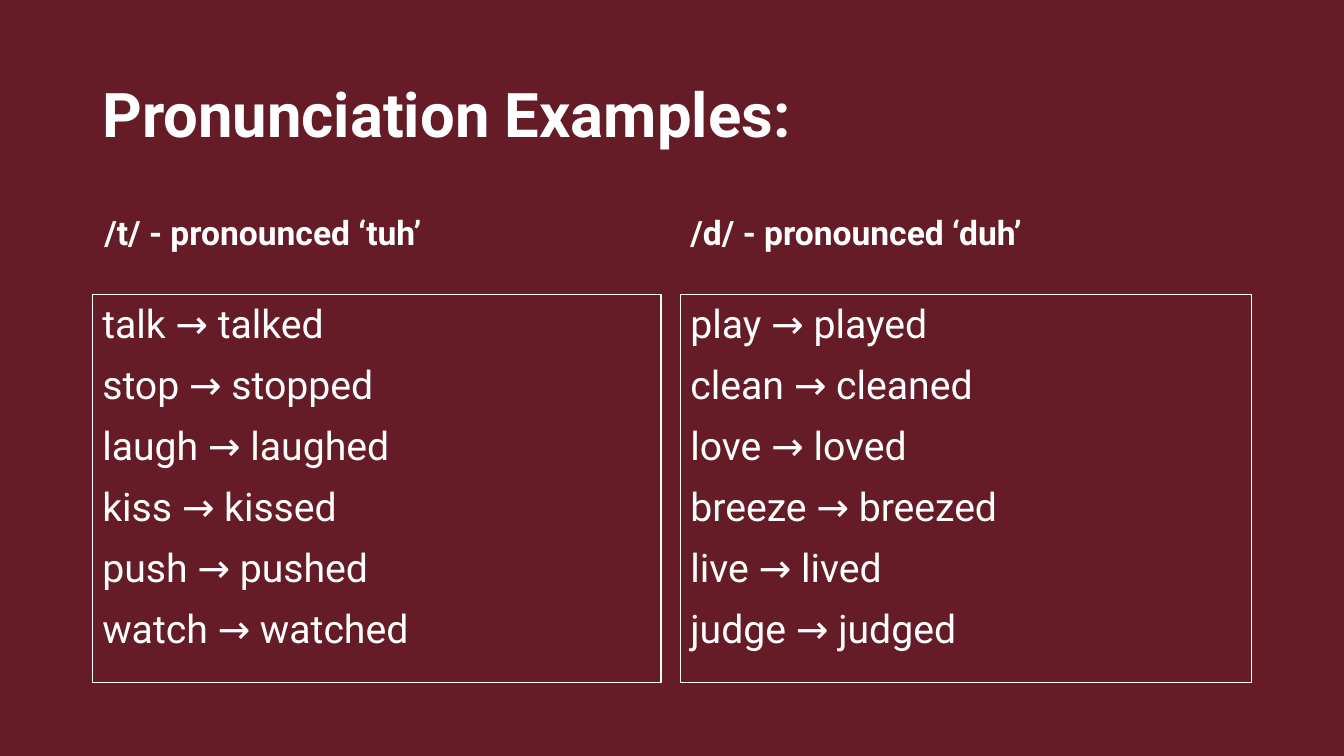
from pptx import Presentation
from pptx.dml.color import RGBColor
from pptx.enum.shapes import MSO_SHAPE
from pptx.enum.text import MSO_ANCHOR, PP_ALIGN
from pptx.util import Cm, Pt


class PronunciationSlide:
    """Holds the style and the slide, and adds each kind of element."""

    font = "Roboto"
    colors = {"burgundy": "651C27", "white": "FFFFFF"}

    def __init__(self, deck):
        self.slide = deck.slides.add_slide(deck.slide_layouts[6])
        background = self.slide.background.fill
        background.solid()
        background.fore_color.rgb = self.color("burgundy")

    def color(self, name):
        return RGBColor.from_string(self.colors[name])

    def add_lines(self, frame, lines, size, bold, anchor, spacing=1.0):
        frame.word_wrap = True
        frame.vertical_anchor = anchor
        for index, line in enumerate(lines):
            paragraph = frame.add_paragraph() if index else frame.paragraphs[0]
            paragraph.alignment = PP_ALIGN.LEFT
            paragraph.line_spacing = spacing
            if index:
                paragraph.space_before = Pt(10)
            run = paragraph.add_run()
            run.text = line
            run.font.name = self.font
            run.font.size = Pt(size)
            run.font.bold = bold
            run.font.color.rgb = self.color("white")

    def heading(self, text, left, top, width, height, size, anchor, spacing=1.0):
        box = self.slide.shapes.add_textbox(Cm(left), Cm(top), Cm(width), Cm(height))
        self.add_lines(box.text_frame, [text], size, True, anchor, spacing)

    def word_list(self, words, left, top, width, height):
        panel = self.slide.shapes.add_shape(
            MSO_SHAPE.RECTANGLE, Cm(left), Cm(top), Cm(width), Cm(height))
        panel.shadow.inherit = False
        panel.fill.background()
        panel.line.color.rgb = self.color("white")
        panel.line.width = Pt(0.75)
        lines = [f"{verb} → {past}" for verb, past in words]
        self.add_lines(panel.text_frame, lines, 28, False, MSO_ANCHOR.TOP)


def main():
    deck = Presentation()
    deck.slide_width, deck.slide_height = Cm(33.87), Cm(19.05)
    page = PronunciationSlide(deck)
    page.heading("Pronunciation Examples:", 2.33, 1.01, 29.21, 3.68, 44, MSO_ANCHOR.MIDDLE)

    t_verbs = [("talk", "talked"), ("stop", "stopped"), ("laugh", "laughed"),
               ("kiss", "kissed"), ("push", "pushed"), ("watch", "watched")]
    d_verbs = [("play", "played"), ("clean", "cleaned"), ("love", "loved"),
               ("breeze", "breezed"), ("live", "lived"), ("judge", "judged")]
    sounds = [("/t/ - pronounced ‘tuh’", t_verbs, 2.38, 2.33, 14.33),
              ("/d/ - pronounced ‘duh’", d_verbs, 17.15, 17.15, 14.4)]
    for sound, verbs, heading_left, list_left, width in sounds:
        page.heading(sound, heading_left, 4.19, width, 2.29, 24, MSO_ANCHOR.BOTTOM, 1.1)
        page.word_list(verbs, list_left, 7.41, width, 9.78)

    deck.save("out.pptx")


if __name__ == "__main__":
    main()
